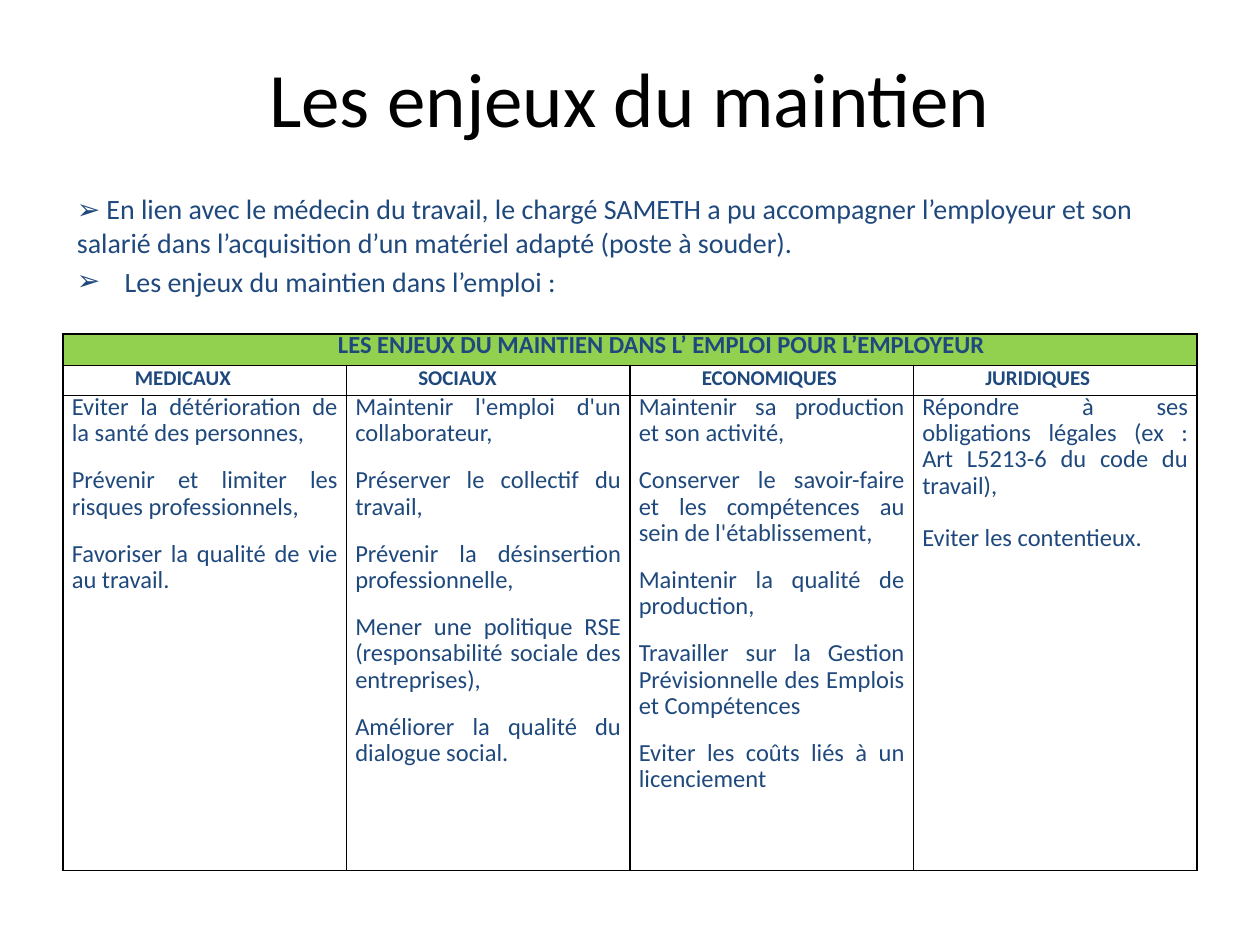
from lxml import etree
from pptx import Presentation
from pptx import util as u
from pptx.dml.color import RGBColor
from pptx.enum import text
from pptx.oxml import ns

NAVY = RGBColor(0x1F, 0x49, 0x7D)
GREEN = RGBColor(0x92, 0xD0, 0x50)
BLACK = RGBColor(0, 0, 0)
FONT = "Calibri"
JUSTIFY = text.PP_ALIGN.JUSTIFY
CENTER = text.PP_ALIGN.CENTER

banner = "LES ENJEUX DU MAINTIEN DANS L’ EMPLOI POUR L’EMPLOYEUR"
stakes = {
    "MEDICAUX": [
        "Eviter la détérioration de la santé des personnes,",
        "Prévenir et limiter les risques professionnels,",
        "Favoriser la qualité de vie au travail.",
    ],
    "SOCIAUX": [
        "Maintenir l'emploi d'un collaborateur,",
        "Préserver le collectif du travail,",
        "Prévenir la désinsertion professionnelle,",
        "Mener une politique RSE (responsabilité sociale des entreprises),",
        "Améliorer la qualité du dialogue social.",
    ],
    "ECONOMIQUES": [
        "Maintenir sa production et son activité,",
        "Conserver le savoir-faire et les compétences au sein de l'établissement,",
        "Maintenir la qualité de production,",
        "Travailler sur la Gestion Prévisionnelle des Emplois et Compétences",
        "Eviter les coûts liés à un licenciement",
    ],
    "JURIDIQUES": [
        "Répondre à ses obligations légales (ex : Art L5213-6 du code du travail),",
        "Eviter les contentieux.",
    ],
}


def style(paragraph, size, color=NAVY, bold=False):
    for run in paragraph.runs:
        run.font.name = FONT
        run.font.size = u.Pt(size)
        run.font.bold = bold
        run.font.color.rgb = color


def fill_cell(cell, lines, size, align=JUSTIFY, bold=False, indent=0, gap=12):
    cell.margin_left = cell.margin_right = u.Inches(0.07)
    cell.margin_top = cell.margin_bottom = 0
    cell.text_frame.text = "\n".join(lines)
    for position, paragraph in enumerate(cell.text_frame.paragraphs):
        paragraph.alignment = align
        paragraph.line_spacing = u.Pt(15)
        paragraph.space_before = u.Pt(gap if position else 0)
        paragraph._p.get_or_add_pPr().set("marL", str(u.Inches(indent)))
        style(paragraph, size, bold=bold)


deck = Presentation()
deck.slide_width, deck.slide_height = u.Inches(10), u.Inches(7.5)
slide = deck.slides.add_slide(deck.slide_layouts[1])

title = slide.shapes.title
title.left, title.top, title.width, title.height = map(u.Inches, (0.5, 0.3, 9, 0.93))
title.text_frame.text = "Les enjeux du maintien"
title.text_frame.vertical_anchor = text.MSO_ANCHOR.MIDDLE
title.text_frame.paragraphs[0].alignment = CENTER
style(title.text_frame.paragraphs[0], 44, BLACK)

intro = slide.placeholders[1]
intro.left, intro.top, intro.width, intro.height = map(u.Inches, (0.51, 1.47, 8.99, 5.23))
intro.text_frame.text = (
    "➢ En lien avec le médecin du travail, le chargé SAMETH a pu accompagner "
    "l’employeur et son salarié dans l’acquisition d’un matériel adapté (poste à souder).\n"
    "Les enjeux du maintien dans l’emploi :"
)
for paragraph, hanging, bullet in zip(intro.text_frame.paragraphs, (0, 0.38), (None, "➢")):
    properties = paragraph._p.get_or_add_pPr()
    properties.set("marL", str(u.Inches(hanging)))
    properties.set("indent", str(-u.Inches(hanging)))
    if bullet:
        etree.SubElement(properties, ns.qn("a:buFont"), typeface=FONT)
        etree.SubElement(properties, ns.qn("a:buChar"), char=bullet)
    else:
        etree.SubElement(properties, ns.qn("a:buNone"))
    style(paragraph, 16)

grid = slide.shapes.add_table(
    3, len(stakes), u.Inches(0.5), u.Inches(2.65), u.Inches(9), u.Inches(4.26)
).table
grid.first_row = grid.horz_banding = False
for row, height in zip(grid.rows, (0.25, 0.24, 3.77)):
    row.height = u.Inches(height)

for cell in grid.iter_cells():
    properties = cell._tc.get_or_add_tcPr()
    for side in ("a:lnL", "a:lnR", "a:lnT", "a:lnB"):
        border = etree.SubElement(properties, ns.qn(side), w=str(u.Pt(1)))
        paint = etree.SubElement(border, ns.qn("a:solidFill"))
        etree.SubElement(paint, ns.qn("a:srgbClr"), val=str(BLACK))
    cell.fill.background()

heading = grid.cell(0, 0)
heading.merge(grid.cell(0, len(stakes) - 1))
heading.fill.solid()
heading.fill.fore_color.rgb = GREEN
fill_cell(heading, [banner], 14, align=CENTER, bold=True, indent=0.5)

for column, (theme, points) in enumerate(stakes.items()):
    fill_cell(grid.cell(1, column), [theme], 12, bold=True, indent=0.5)
    gap = 15 if theme == "JURIDIQUES" else 12
    fill_cell(grid.cell(2, column), points, 14, gap=gap)

deck.save("out.pptx")
